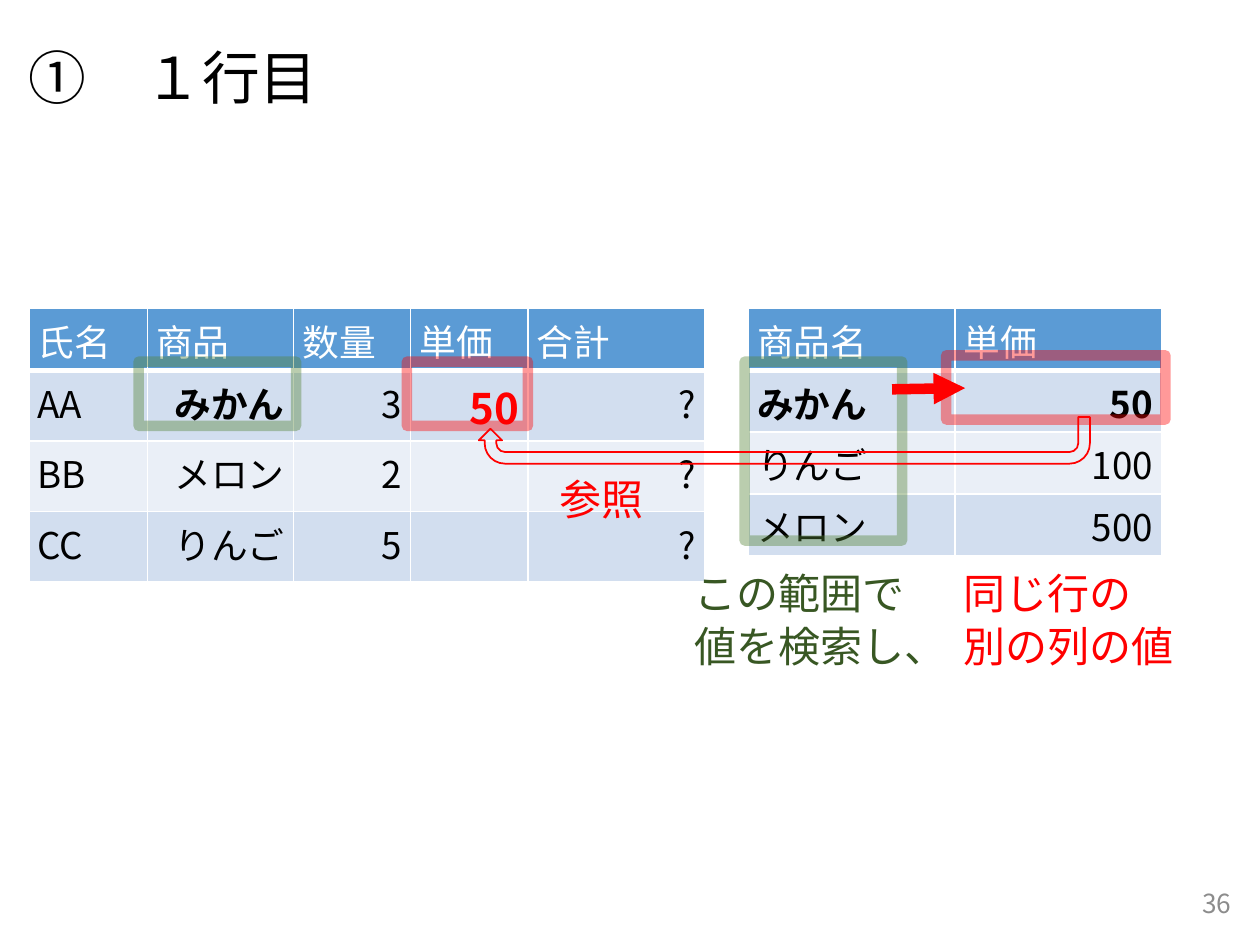
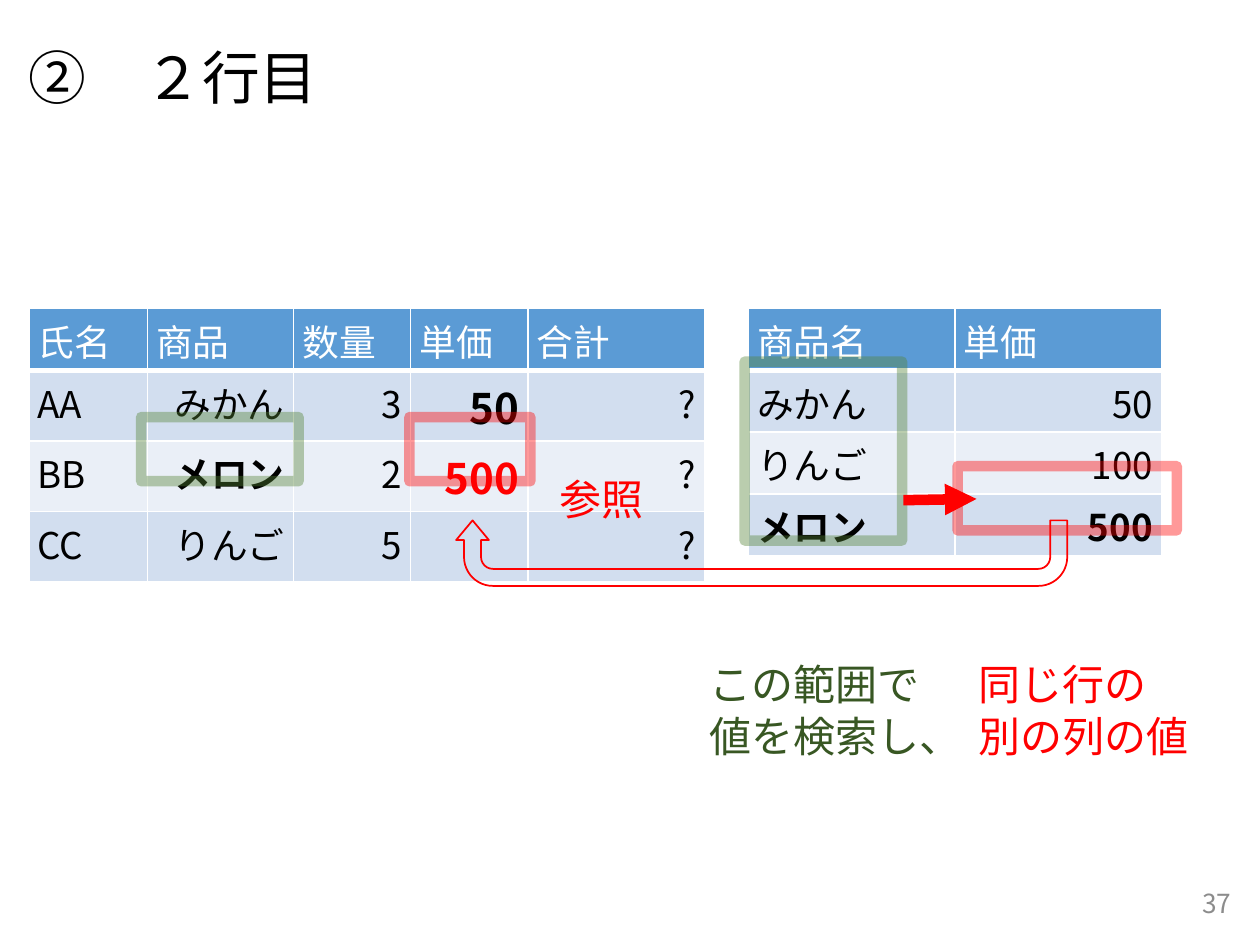
from lxml import etree
from pptx import Presentation
from pptx.dml.color import RGBColor
from pptx.enum.shapes import MSO_CONNECTOR, MSO_SHAPE
from pptx.enum.text import MSO_ANCHOR, PP_ALIGN
from pptx.oxml.ns import qn
from pptx.util import Inches, Pt

LEFT, RIGHT = PP_ALIGN.LEFT, PP_ALIGN.RIGHT
MIDDLE = MSO_ANCHOR.MIDDLE
RECTANGLE, U_TURN = MSO_SHAPE.RECTANGLE, MSO_SHAPE.U_TURN_ARROW
STRAIGHT = MSO_CONNECTOR.STRAIGHT

BODY_FONT, TITLE_FONT = "Noto Sans CJK JP", "Lato"
BLACK, WHITE, GRAY = "000000", "FFFFFF", "8C8C8C"
RED, GREEN, DARK_GREEN = "FF0000", "548235", "385723"
HEADER, BANDS = "5B9BD5", ("D2DEEF", "EAEFF7")

PRICES = [("みかん", "50"), ("りんご", "100"), ("メロン", "500")]
ORDERS = [("AA", "みかん", "3"), ("BB", "メロン", "2"), ("CC", "りんご", "5")]
ORDER_HEADS = ["氏名", "商品", "数量", "単価", "合計"]
PRICE_HEADS = ["商品名", "単価"]

STEPS = [
    dict(title="①　１行目", number="36", product_at=(1.1, 2.87),
         result_at=(7.51, 2.82), return_at=(3.8, 3.31, 4.85, 0.37),
         bends=None, caption_at=(5.41, 4.44)),
    dict(title="②　２行目", number="37", product_at=(1.12, 3.31),
         result_at=(7.6, 3.7), return_at=(3.62, 4.13, 4.85, 0.52),
         bends=(0.26, 0.25, 0.3, 0.44, 1), caption_at=(5.53, 5.16)),
]


def color(value):
    return RGBColor.from_string(value)


def write(para, text, size=21, ink=BLACK, font=BODY_FONT, bold=False,
          align=LEFT, spacing=None):
    span = para.add_run()
    span.text = text
    span.font.size = Pt(size)
    span.font.bold = bold
    span.font.name = font
    span.font.color.rgb = color(ink)
    east_asian = etree.SubElement(span.font._element, qn("a:ea"))
    east_asian.set("typeface", BODY_FONT)
    para.alignment = align
    if spacing:
        para.line_spacing = spacing


def set_borders(cell, bottom):
    properties = cell._tc.get_or_add_tcPr()
    sides = (("lnL", 1), ("lnR", 1), ("lnT", 1), ("lnB", bottom))
    for position, (side, width) in enumerate(sides):
        line = etree.Element(qn(f"a:{side}"), w=str(Pt(width)))
        fill = etree.SubElement(line, qn("a:solidFill"))
        etree.SubElement(fill, qn("a:srgbClr"), val=WHITE)
        properties.insert(position, line)


class Builder:
    def __init__(self):
        self.deck = Presentation()
        self.deck.slide_width = Inches(10)
        self.deck.slide_height = Inches(7.5)
        self.page = None

    def start(self, title, number):
        self.page = self.deck.slides.add_slide(self.deck.slide_layouts[5])
        box = self.page.shapes.title
        box.left, box.top = Inches(0.13), Inches(0.21)
        box.width, box.height = Inches(9.65), Inches(0.86)
        box.text_frame.vertical_anchor = MIDDLE
        write(box.text_frame.paragraphs[0], title, size=33, font=TITLE_FONT,
              spacing=0.9)
        self.text([number], 7.62, 6.97, 2.25, 0.4, wrap=True, anchor=MIDDLE,
                  size=15, ink=GRAY, align=RIGHT)

    def text(self, lines, left, top, width, height, wrap=False, anchor=None,
             **style):
        box = self.page.shapes.add_textbox(
            Inches(left), Inches(top), Inches(width), Inches(height))
        frame = box.text_frame
        frame.word_wrap = wrap
        if anchor is not None:
            frame.vertical_anchor = anchor
        for index, line in enumerate(lines):
            para = frame.add_paragraph() if index else frame.paragraphs[0]
            write(para, line, **style)

    def caption(self, lines, left, top, width, height, ink):
        self.text(lines, left, top, width, height, size=24, ink=ink,
                  spacing=Pt(30))

    def table(self, heads, rows, left, widths, row_height, styles):
        top, head_height = 2.45, 0.49
        height = head_height + row_height * len(rows)
        table = self.page.shapes.add_table(
            len(rows) + 1, len(heads), Inches(left), Inches(top),
            Inches(sum(widths)), Inches(height)).table
        for column, width in zip(table.columns, widths):
            column.width = Inches(width)
        for r, values in enumerate([heads, *rows]):
            table.rows[r].height = Inches(row_height if r else head_height)
            for c, value in enumerate(values):
                cell = table.cell(r, c)
                cell.margin_left = cell.margin_right = Inches(0.07)
                cell.margin_top = cell.margin_bottom = Inches(0.04)
                cell.fill.solid()
                cell.fill.fore_color.rgb = color(
                    BANDS[(r - 1) % 2] if r else HEADER)
                set_borders(cell, 1 if r else 3)
                if value:
                    style = {"align": RIGHT if c else LEFT} if r else {"ink": WHITE}
                    style.update(styles.get((r, c), {}))
                    write(cell.text_frame.paragraphs[0], value, **style)

    def outline(self, kind, left, top, width, height, ink, weight):
        shape = self.page.shapes.add_shape(
            kind, Inches(left), Inches(top), Inches(width), Inches(height))
        shape.shadow.inherit = False
        shape.fill.background()
        shape.line.color.rgb = color(ink)
        shape.line.width = Pt(weight)
        return shape

    def frame(self, left, top, width, height, ink):
        shape = self.outline(RECTANGLE, left, top, width, height, ink, 6)
        shade = shape.element.spPr.find(".//" + qn("a:ln")).find(
            ".//" + qn("a:srgbClr"))
        etree.SubElement(shade, qn("a:alpha"), val="40000")

    def return_arrow(self, left, top, width, height, bends):
        shape = self.outline(U_TURN, left, top, width, height, RED, 1)
        shape.rotation = 180
        for index, bend in enumerate(bends or ()):
            shape.adjustments[index] = bend

    def arrow(self, left, top):
        line = self.page.shapes.add_connector(
            STRAIGHT, Inches(left), Inches(top), Inches(left + 0.58),
            Inches(top - 0.01))
        line.line.color.rgb = color(RED)
        line.line.width = Pt(6)
        properties = line._element.spPr
        etree.SubElement(properties.find(qn("a:ln")), qn("a:tailEnd"),
                         type="triangle")
        etree.SubElement(properties, qn("a:effectLst"))


def build_step(builder, row, title, number, product_at, result_at, return_at,
               bends, caption_at):
    builder.start(title, number)
    lookup = dict(PRICES)
    wanted = ORDERS[row - 1][1]
    found = [name for name, _ in PRICES].index(wanted) + 1
    bold = {"bold": True}

    price_styles = {(found, 0): bold}
    order_styles = {(row, 1): bold}
    if row == 1:
        price_styles[found, 1] = bold
    else:
        price_styles[found, 1] = bold
    orders = []
    for r, (person, product, count) in enumerate(ORDERS, 1):
        price = lookup[product] if r <= row else ""
        orders.append((person, product, count, price, "?"))
        order_styles[r, 3] = {"size": 24, "bold": True,
                              "ink": RED if r == row else BLACK}
    builder.table(PRICE_HEADS, PRICES, 5.94, [1.64, 1.64], 0.49, price_styles)
    builder.table(ORDER_HEADS, orders, 0.23, [0.94, 1.16, 0.93, 0.93, 1.4],
                  0.56, order_styles)

    product_x, product_y = product_at
    result_x, result_y = result_at
    builder.frame(result_x, result_y, 1.74, 0.51, RED)
    builder.frame(product_x + 2.13, product_y, 0.96, 0.51, RED)
    builder.frame(product_x, product_y, 1.25, 0.51, GREEN)
    builder.frame(5.91, 2.87, 1.25, 1.42, GREEN)
    builder.arrow(result_x - 0.43, result_y + 0.27)
    builder.return_arrow(*return_at, bends)

    caption_x, caption_y = caption_at
    builder.caption(["この範囲で", "値を検索し、"], caption_x, caption_y,
                    2.22, 0.91, DARK_GREEN)
    builder.caption(["同じ行の", "別の列の値"], caption_x + 2.14, caption_y,
                    1.88, 0.91, RED)
    builder.caption(["参照"], 4.34, 3.69, 0.88, 0.5, RED)


def main():
    builder = Builder()
    for row, step in enumerate(STEPS, 1):
        build_step(builder, row, **step)
    builder.deck.save("out.pptx")


if __name__ == "__main__":
    main()
